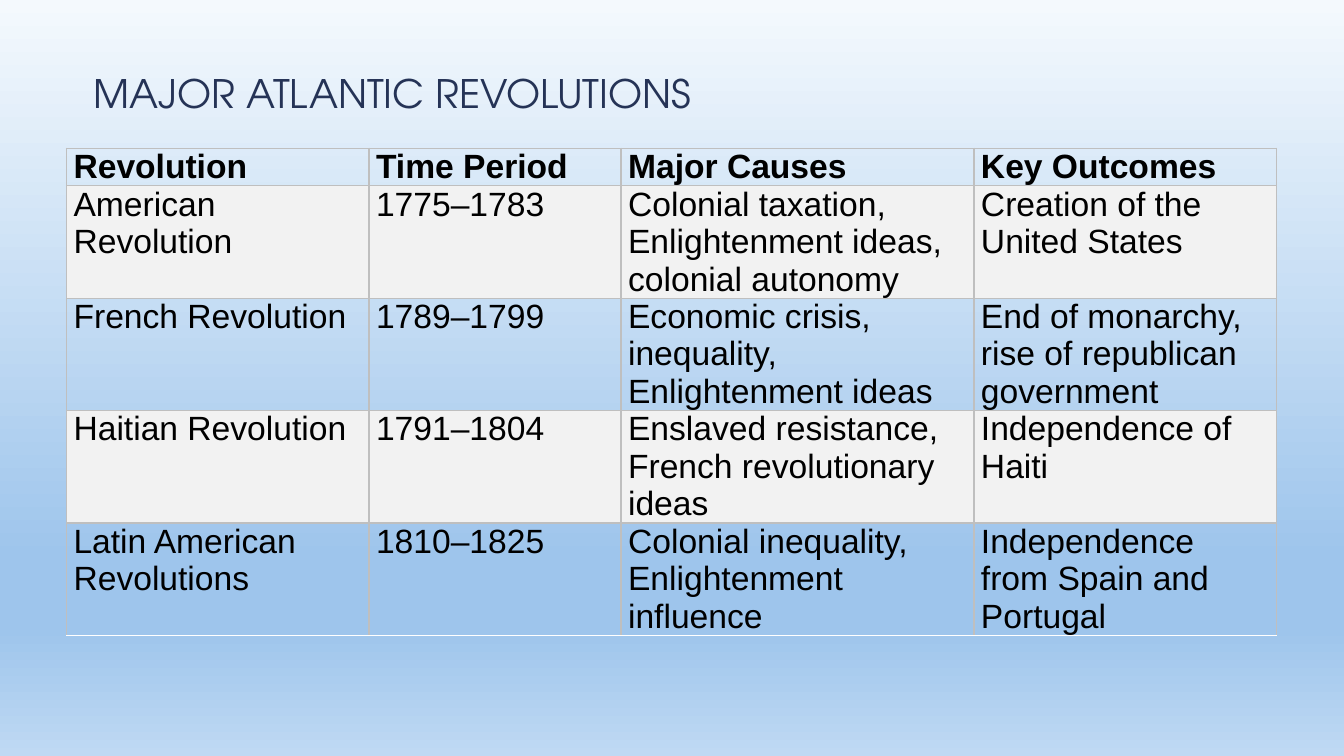
from lxml import etree
from pptx import Presentation
from pptx.dml.color import RGBColor
from pptx.enum.text import MSO_ANCHOR, MSO_AUTO_SIZE, PP_ALIGN
from pptx.oxml.ns import qn
from pptx.util import Inches, Pt

BOTTOM, TOP = MSO_ANCHOR.BOTTOM, MSO_ANCHOR.TOP
LEFT = PP_ALIGN.LEFT
NO_AUTOFIT = MSO_AUTO_SIZE.NONE

COLORS = {"title": "253356", "text": "000000", "band": "F2F2F2", "border": "BFBFBF"}
SKY = [(0, "F4F9FD"), (74, "9EC5EC"), (83, "9EC5EC"), (100, "BFD9F3")]

COLUMN_WIDTHS = [3, 2.5, 3.5, 3]
HEADER_HEIGHT, ROW_HEIGHT = 0.37, 1.11
REVOLUTIONS = [
    ["Revolution", "Time Period", "Major Causes", "Key Outcomes"],
    ["American Revolution", "1775–1783",
     "Colonial taxation, Enlightenment ideas, colonial autonomy",
     "Creation of the United States"],
    ["French Revolution", "1789–1799",
     "Economic crisis, inequality, Enlightenment ideas",
     "End of monarchy, rise of republican government"],
    ["Haitian Revolution", "1791–1804",
     "Enslaved resistance, French revolutionary ideas",
     "Independence of Haiti"],
    ["Latin American Revolutions", "1810–1825",
     "Colonial inequality, Enlightenment influence",
     "Independence from Spain and Portugal"],
]


class SlideBuilder:
    def __init__(self, prs):
        self.s = prs.slides.add_slide(prs.slide_layouts[5])

    def background(self, stops):
        """Fill the slide from top to bottom with (percent, colour) stops."""
        fill = self.s.background.fill
        fill.gradient()
        fill.gradient_angle = 270
        stop_list = next(self.s.background._cSld.iter(qn("a:gsLst")))
        for old in list(stop_list):
            stop_list.remove(old)
        for percent, color in stops:
            stop = etree.SubElement(stop_list, qn("a:gs"), pos=str(percent * 1000))
            etree.SubElement(stop, qn("a:srgbClr"), val=color)

    def font(self, p, name, size, color, bold=False):
        for r in p.runs:
            r.font.name, r.font.size, r.font.bold = name, Pt(size), bold
            r.font.color.rgb = RGBColor.from_string(COLORS[color])

    def title(self, text, left, top, width, height):
        sp = self.s.shapes.title
        sp.left, sp.top, sp.width, sp.height = map(Inches, (left, top, width, height))
        tf = sp.text_frame
        tf.text = text
        tf.auto_size, tf.word_wrap, tf.vertical_anchor = NO_AUTOFIT, True, BOTTOM
        p = tf.paragraphs[0]
        p.alignment, p.line_spacing = LEFT, 0.9
        self.font(p, "TeX Gyre Adventor", 28, "title")

    def borders(self, cell, sides):
        """Draw thin lines on the given sides; call before filling the cell."""
        props = cell._tc.get_or_add_tcPr()
        for side in sides:
            line = etree.SubElement(props, qn(f"a:ln{side}"), w=str(Pt(1)))
            fill = etree.SubElement(line, qn("a:solidFill"))
            etree.SubElement(fill, qn("a:srgbClr"), val=COLORS["border"])

    def cell(self, cell, text, bold, banded, sides):
        cell.margin_left = cell.margin_right = Inches(0.07)
        cell.margin_top = cell.margin_bottom = 0
        cell.vertical_anchor = TOP
        cell.text_frame.text = text
        self.font(cell.text_frame.paragraphs[0], "Arial", 24, "text", bold)
        self.borders(cell, sides)
        if banded:
            cell.fill.solid()
            cell.fill.fore_color.rgb = RGBColor.from_string(COLORS["band"])
        else:
            cell.fill.background()

    def table(self, rows, widths, left, top):
        heights = [HEADER_HEIGHT] + [ROW_HEIGHT] * (len(rows) - 1)
        frame = self.s.shapes.add_table(
            len(rows), len(widths), Inches(left), Inches(top),
            Inches(sum(widths)), Inches(sum(heights)))
        table = frame.table
        table.first_row = table.horz_banding = False
        for column, width in zip(table.columns, widths):
            column.width = Inches(width)
        for i, (row, height) in enumerate(zip(rows, heights)):
            table.rows[i].height = Inches(height)
            sides = "LRT" if i == len(rows) - 1 else "LRTB"
            for j, text in enumerate(row):
                self.cell(table.cell(i, j), text, i == 0, i % 2 == 1, sides)


def main():
    prs = Presentation()
    prs.slide_width, prs.slide_height = Inches(13.33), Inches(7.5)
    slide = SlideBuilder(prs)
    slide.background(SKY)
    slide.title("MAJOR ATLANTIC REVOLUTIONS", 0.83, 0.33, 11.67, 0.88)
    slide.table(REVOLUTIONS, COLUMN_WIDTHS, 0.66, 1.47)
    prs.save("out.pptx")


if __name__ == "__main__":
    main()
